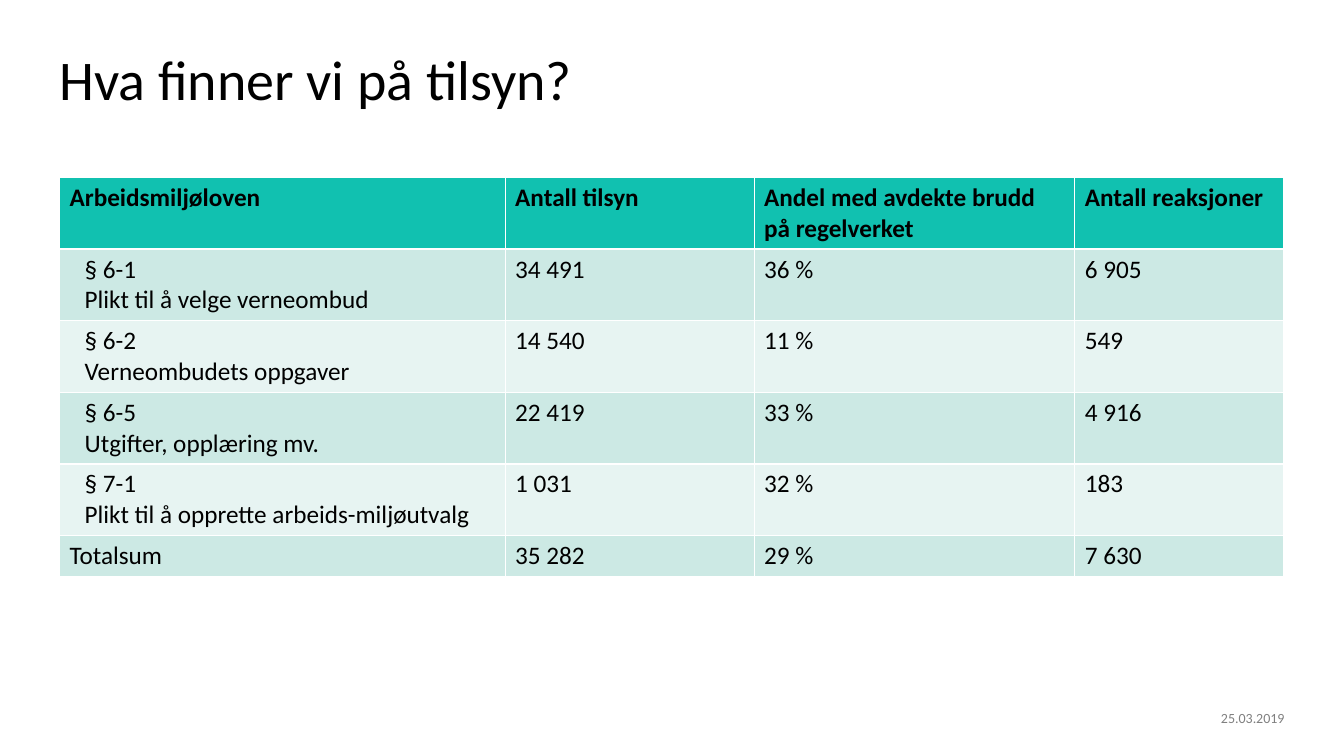
from pptx import Presentation
from pptx.dml.color import RGBColor
from pptx.enum.text import MSO_ANCHOR, PP_ALIGN
from pptx.util import Inches, Pt

LEFT, RIGHT = PP_ALIGN.LEFT, PP_ALIGN.RIGHT
TOP, MIDDLE = MSO_ANCHOR.TOP, MSO_ANCHOR.MIDDLE
FONT = "Calibri"
COLORS = {
    "text": "000000",
    "date": "808080",
    "header": "11C1B0",
    "odd_row": "CCE9E4",
    "even_row": "E7F4F2",
}
MARGIN, CONTENT_WIDTH = 0.59, 12.15
COLUMN_WIDTHS = [4.42, 2.47, 3.18, 2.07]
ROW_HEIGHT = 0.41
PARAGRAPH_INDENT = 0.15
FINDINGS = [
    ["Arbeidsmiljøloven", "Antall tilsyn", "Andel med avdekte brudd på regelverket", "Antall reaksjoner"],
    ["§ 6-1\nPlikt til å velge verneombud", "34 491", "36 %", "6 905"],
    ["§ 6-2\nVerneombudets oppgaver", "14 540", "11 %", "549"],
    ["§ 6-5\nUtgifter, opplæring mv.", "22 419", "33 %", "4 916"],
    ["§ 7-1\nPlikt til å opprette arbeids-miljøutvalg", "1 031", "32 %", "183"],
    ["Totalsum", "35 282", "29 %", "7 630"],
]


def color(name):
    return RGBColor.from_string(COLORS[name])


def format_paragraph(paragraph, size, color_name, alignment=LEFT, bold=False):
    paragraph.alignment = alignment
    font = paragraph.font
    font.name, font.size, font.bold = FONT, Pt(size), bold
    font.color.rgb = color(color_name)


def remove_margins(frame):
    frame.margin_left = frame.margin_right = 0
    frame.margin_top = frame.margin_bottom = 0
    frame.word_wrap = True


def place_title(slide, left, top, width, height):
    title = slide.shapes.title
    title.left, title.top = Inches(left), Inches(top)
    title.width, title.height = Inches(width), Inches(height)
    frame = title.text_frame
    remove_margins(frame)
    frame.vertical_anchor = MIDDLE
    frame.text = "Hva finner vi på tilsyn?"
    paragraph = frame.paragraphs[0]
    paragraph.line_spacing = 0.9
    format_paragraph(paragraph, 40, "text")


def fill_cell(cell, text, row_index):
    cell.text = text
    cell.vertical_anchor = TOP
    cell.fill.solid()
    is_header = row_index == 0
    band = "odd_row" if row_index % 2 else "even_row"
    cell.fill.fore_color.rgb = color("header" if is_header else band)
    for paragraph in cell.text_frame.paragraphs:
        if "\n" in text:
            properties = paragraph._p.get_or_add_pPr()
            properties.set("marL", "0")
            properties.set("indent", str(Inches(PARAGRAPH_INDENT)))
        format_paragraph(paragraph, 18, "text", bold=is_header)


def place_findings_table(slide, left, top, width):
    rows, columns = len(FINDINGS), len(COLUMN_WIDTHS)
    table = slide.shapes.add_table(
        rows, columns, Inches(left), Inches(top), Inches(width), Inches(rows * ROW_HEIGHT)
    ).table
    for column, column_width in zip(table.columns, COLUMN_WIDTHS):
        column.width = Inches(column_width)
    for row_index, texts in enumerate(FINDINGS):
        table.rows[row_index].height = Inches(ROW_HEIGHT)
        for column_index, text in enumerate(texts):
            fill_cell(table.cell(row_index, column_index), text, row_index)


def place_date(slide, left, top, width, height):
    box = slide.shapes.add_textbox(Inches(left), Inches(top), Inches(width), Inches(height))
    frame = box.text_frame
    remove_margins(frame)
    frame.text = "25.03.2019"
    format_paragraph(frame.paragraphs[0], 10, "date", RIGHT)


def main():
    presentation = Presentation()
    presentation.slide_width, presentation.slide_height = Inches(13.33), Inches(7.5)
    slide = presentation.slides.add_slide(presentation.slide_layouts[5])
    place_title(slide, MARGIN, 0.51, CONTENT_WIDTH, 0.61)
    place_findings_table(slide, MARGIN, 1.76, CONTENT_WIDTH)
    place_date(slide, 11.17, 7.04, 1.57, 0.17)
    presentation.save("out.pptx")


if __name__ == "__main__":
    main()
